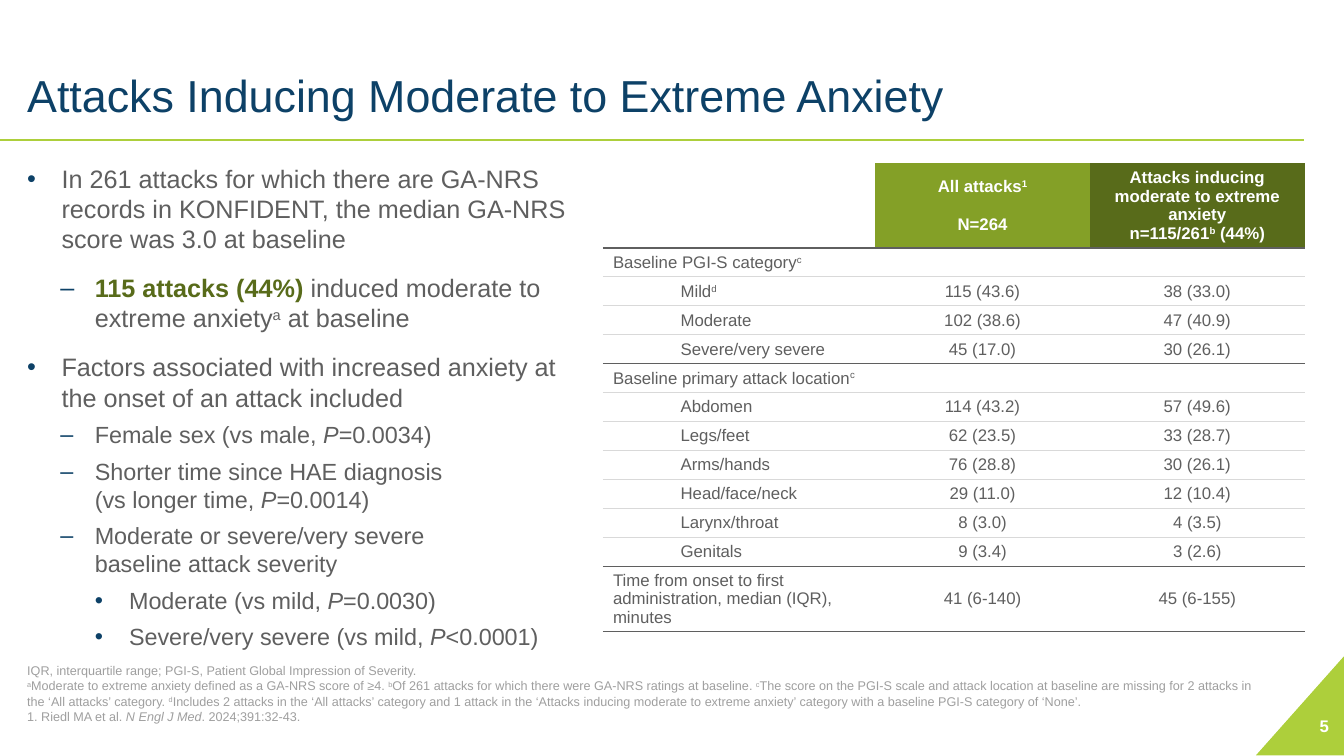
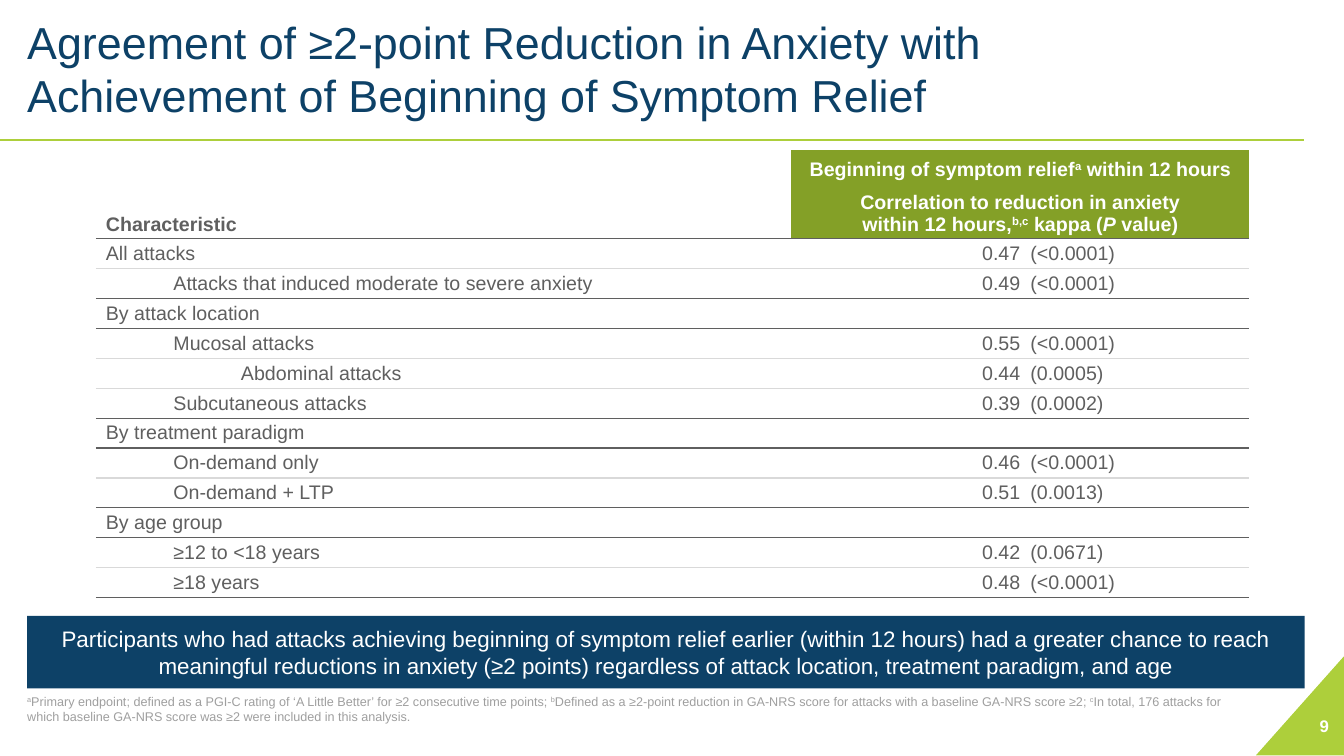
from dataclasses import dataclass

from lxml import etree
from pptx import Presentation
from pptx.dml.color import RGBColor
from pptx.enum.shapes import MSO_CONNECTOR, MSO_SHAPE
from pptx.enum.text import MSO_ANCHOR, MSO_AUTO_SIZE, PP_ALIGN
from pptx.oxml.ns import qn
from pptx.util import Inches, Pt

LEFT, CENTER, RIGHT = PP_ALIGN.LEFT, PP_ALIGN.CENTER, PP_ALIGN.RIGHT
TOP, MIDDLE, BOTTOM = MSO_ANCHOR.TOP, MSO_ANCHOR.MIDDLE, MSO_ANCHOR.BOTTOM
NO_FIT = MSO_AUTO_SIZE.NONE
RECTANGLE, TRIANGLE = MSO_SHAPE.RECTANGLE, MSO_SHAPE.RIGHT_TRIANGLE
STRAIGHT = MSO_CONNECTOR.STRAIGHT
TITLE_ONLY = 5
PLAIN_TABLE = "{2D5ABB26-0587-4C30-8999-92F81FD0307C}"


@dataclass(frozen=True)
class Theme:
    """Colours, font and type sizes of the deck."""

    font: str = "Arial"
    navy: str = "0D4167"
    lime: str = "ADCF3B"
    green: str = "84A027"
    olive: str = "586B1A"
    text: str = "5F5F5F"
    muted: str = "9F9F9F"
    rule: str = "D9D9D9"
    white: str = "FFFFFF"
    title: float = 32
    body: float = 18
    detail: float = 16.7
    callout: float = 16
    table: float = 14
    small: float = 12
    note: float = 9


THEME = Theme()

TITLE_BOX = (0.27, 0.27, 11.78, 0.99)
NOTE_BOX = (0.27, 6.7, 12.18, 0.48)
NUMBER_BOX = (12.62, 7, 0.66, 0.4)
CORNER_BOX = (12.4, 6.56, 0.99, 0.88)

ANXIETY_BULLETS = [
    (0, THEME.body, 0, "In 261 attacks for which there are GA-NRS records in KONFIDENT, "
     "the median GA-NRS score was 3.0 at baseline"),
    (1, THEME.body, 13.3, "*115 attacks (44%)* induced moderate to extreme anxiety^a^ at baseline"),
    (0, THEME.body, 13.3, "Factors associated with increased anxiety at the onset of an attack included"),
    (1, THEME.detail, 6, "Female sex (vs male, _P_=0.0034)"),
    (1, THEME.detail, 6, "Shorter time since HAE diagnosis\n(vs longer time, _P_=0.0014)"),
    (1, THEME.detail, 6, "Moderate or severe/very severe\nbaseline attack severity"),
    (2, THEME.detail, 6, "Moderate (vs mild, _P_=0.0030)"),
    (2, THEME.detail, 6, "Severe/very severe (vs mild, _P_<0.0001)"),
]

ANXIETY_ROWS = [
    (0, "Baseline PGI-S category^c^", "", ""),
    (1, "Mild^d^", "115 (43.6)", "38 (33.0)"),
    (1, "Moderate", "102 (38.6)", "47 (40.9)"),
    (1, "Severe/very severe", "45 (17.0)", "30 (26.1)"),
    (0, "Baseline primary attack location^c^", "", ""),
    (1, "Abdomen", "114 (43.2)", "57 (49.6)"),
    (1, "Legs/feet", "62 (23.5)", "33 (28.7)"),
    (1, "Arms/hands", "76 (28.8)", "30 (26.1)"),
    (1, "Head/face/neck", "29 (11.0)", "12 (10.4)"),
    (1, "Larynx/throat", "8 (3.0)", "4 (3.5)"),
    (1, "Genitals", "9 (3.4)", "3 (2.6)"),
    (0, "Time from onset to first administration, median (IQR), minutes",
     "41 (6-140)", "45 (6-155)"),
]

ANXIETY_NOTE = (
    "IQR, interquartile range; PGI-S, Patient Global Impression of Severity.\n"
    "^a^Moderate to extreme anxiety defined as a GA-NRS score of ≥4. "
    "^b^Of 261 attacks for which there were GA-NRS ratings at baseline. "
    "^c^The score on the PGI-S scale and attack location at baseline are missing "
    "for 2 attacks in the ‘All attacks’ category. "
    "^d^Includes 2 attacks in the ‘All attacks’ category and 1 attack in the "
    "‘Attacks inducing moderate to extreme anxiety’ category with a baseline PGI-S "
    "category of ‘None’.\n1. Riedl MA et al. _N Engl J Med_. 2024;391:32-43."
)

RELIEF_ROWS = [
    (0, "All attacks", "0.47", "(<0.0001)"),
    (1, "Attacks that induced moderate to severe anxiety", "0.49", "(<0.0001)"),
    (0, "By attack location", "", ""),
    (1, "Mucosal attacks", "0.55", "(<0.0001)"),
    (2, "Abdominal attacks", "0.44", "(0.0005)"),
    (1, "Subcutaneous attacks", "0.39", "(0.0002)"),
    (0, "By treatment paradigm", "", ""),
    (1, "On-demand only", "0.46", "(<0.0001)"),
    (1, "On-demand + LTP", "0.51", "(0.0013)"),
    (0, "By age group", "", ""),
    (1, "≥12 to <18 years", "0.42", "(0.0671)"),
    (1, "≥18 years", "0.48", "(<0.0001)"),
]

RELIEF_NOTE = (
    "^a^Primary endpoint; defined as a PGI-C rating of ‘A Little Better’ for ≥2 "
    "consecutive time points; ^b^Defined as a ≥2-point reduction in GA-NRS score for "
    "attacks with a baseline GA-NRS score ≥2; ^c^In total, 176 attacks for which "
    "baseline GA-NRS score was ≥2 were included in this analysis."
)

RELIEF_CALLOUT = (
    "Participants who had attacks achieving beginning of symptom relief earlier "
    "(within 12 hours) had a greater chance to reach meaningful reductions in anxiety "
    "(≥2 points) regardless of attack location, treatment paradigm, and age"
)


def rgb(color):
    """Return a colour object for a hex string."""
    return RGBColor.from_string(color)


def inches(box):
    """Convert a box in inches to lengths."""
    return [Inches(v) for v in box]


def write_rich(p, text, size, color, bold=False, strong=None):
    """Write text in which ^, _ and * toggle superscript, italic and strong."""
    on = {"^": False, "_": False, "*": False}
    if not text:
        p._p.get_or_add_endParaRPr().set("sz", str(int(size * 100)))
    for mark in on:
        text = text.replace(mark, f"\0{mark}\0")
    for part in text.replace("\n", "\0\n\0").split("\0"):
        if part in on:
            on[part] = not on[part]
        elif part == "\n":
            p.add_line_break()
        elif part:
            r = p.add_run()
            r.text = part
            r.font.name, r.font.size = THEME.font, Pt(size)
            r.font.bold, r.font.italic = bold or on["*"], on["_"]
            r.font.color.rgb = rgb(strong if on["*"] and strong else color)
            if on["^"]:
                r._r.get_or_add_rPr().set("baseline", "30000")


def set_frame(tf, anchor, margins=None):
    """Set wrapping, anchor and (horizontal, vertical) margins of a text frame."""
    tf.word_wrap, tf.auto_size, tf.vertical_anchor = True, NO_FIT, anchor
    if margins:
        tf.margin_left = tf.margin_right = Inches(margins[0])
        tf.margin_top = tf.margin_bottom = Inches(margins[1])


def add_text(s, box, text, size, color, anchor, align=LEFT, bold=False, margins=None):
    """Add a one-paragraph text box."""
    tf = s.shapes.add_textbox(*inches(box)).text_frame
    set_frame(tf, anchor, margins)
    tf.paragraphs[0].alignment = align
    write_rich(tf.paragraphs[0], text, size, color, bold)


def add_block(s, kind, box, fill):
    """Add a filled shape without outline or shadow."""
    sp = s.shapes.add_shape(kind, *inches(box))
    sp.shadow.inherit = False
    sp.fill.solid()
    sp.fill.fore_color.rgb = rgb(fill)
    sp.line.fill.background()
    return sp


def add_slide(prs, title, number, note):
    """Add a slide with title, rule, corner, page number and footnote."""
    s = prs.slides.add_slide(prs.slide_layouts[TITLE_ONLY])
    corner = add_block(s, TRIANGLE, CORNER_BOX, THEME.lime)
    corner.rotation = 270
    line = s.shapes.add_connector(STRAIGHT, *inches((12.93, 1.39, 0, 1.39)))
    line.line.color.rgb, line.line.width = rgb(THEME.lime), Pt(2)
    etree.SubElement(line.element.spPr, qn("a:effectLst"))
    sp = s.shapes.title
    sp.left, sp.top, sp.width, sp.height = inches(TITLE_BOX)
    set_frame(sp.text_frame, BOTTOM, (0, 0.05))
    p = sp.text_frame.paragraphs[0]
    p.alignment, p.line_spacing = LEFT, 1.0
    write_rich(p, title, THEME.title, THEME.navy)
    add_text(s, NUMBER_BOX, str(number), THEME.small, THEME.white, MIDDLE, RIGHT, True)
    add_text(s, NOTE_BOX, note, THEME.note, THEME.muted, BOTTOM, margins=(0, 0))
    return s


def add_bullets(s, box, items):
    """Add a three-level bulleted list."""
    tf = s.shapes.add_textbox(*inches(box)).text_frame
    set_frame(tf, TOP, (0, 0.05))
    for i, (level, size, before, text) in enumerate(items):
        p = tf.add_paragraph() if i else tf.paragraphs[0]
        p.level, p.line_spacing, p.space_before = level, 1.0, Pt(before)
        pPr = p._p.get_or_add_pPr()
        pPr.set("marL", str(Inches(round(0.335 * (level + 1), 2))))
        pPr.set("indent", str(-Inches(0.34)))
        color = etree.SubElement(pPr, qn("a:buClr"))
        etree.SubElement(color, qn("a:srgbClr"), val=THEME.navy)
        etree.SubElement(pPr, qn("a:buFont"), typeface=THEME.font)
        etree.SubElement(pPr, qn("a:buChar"), char="•‒•"[level])
        write_rich(p, text, size, THEME.text, strong=THEME.olive)


def fill_cell(cell, paras, size, align=LEFT, anchor=MIDDLE, level=0, fill=None,
              bold=False, gap=0, pad=0.03):
    """Fill a table cell with paragraphs."""
    cell.vertical_anchor = anchor
    cell.margin_top = cell.margin_bottom = Inches(pad)
    color = THEME.white if fill else THEME.text
    for i, text in enumerate(paras):
        p = cell.text_frame.add_paragraph() if i else cell.text_frame.paragraphs[0]
        p.alignment = align
        if i:
            p.space_before = Pt(gap)
        if level:
            p.level = level
            p._p.get_or_add_pPr().set("marL", str(Inches(round(0.67 * level, 2))))
        write_rich(p, text, size, color, bold)
    if fill:
        cell.fill.solid()
        cell.fill.fore_color.rgb = rgb(fill)


def set_border(cell, side, color):
    """Draw one horizontal border of a cell."""
    ln = etree.SubElement(cell._tc.get_or_add_tcPr(), qn(f"a:{side}"), w=str(Pt(1)))
    solid = etree.SubElement(ln, qn("a:solidFill"))
    etree.SubElement(solid, qn("a:srgbClr"), val=color)


def add_grid(s, box, cols, heights, first_rule, dark):
    """Add a plain table ruled below each row, darker below the rows in dark."""
    frame = s.shapes.add_table(len(heights), len(cols), *inches(box))
    frame.element.find(".//" + qn("a:tableStyleId")).text = PLAIN_TABLE
    table = frame.table
    table.first_row = table.horz_banding = False
    for col, width in zip(table.columns, cols):
        col.width = Inches(width)
    for i, (row, height) in enumerate(zip(table.rows, heights)):
        row.height = Inches(height)
        for cell in row.cells:
            for side, above in (("lnT", i - 1), ("lnB", i)):
                if above >= first_rule:
                    set_border(cell, side, THEME.text if above in dark else THEME.rule)
            cell.fill.background()
    return table


def add_anxiety_table(s, box):
    """Add the table of attack characteristics."""
    heights = [0.84] + [3.16 / 11] * 11 + [0.65]
    table = add_grid(s, box, (2.7, 2.13, 2.13), heights, 0, {0, 4, 11, 12})
    fill_cell(table.cell(0, 0), [""], THEME.small)
    heads = [(["All attacks^1^", "N=264"], THEME.green, 13.5),
             (["Attacks inducing\nmoderate to extreme anxiety", "n=115/261^b^ (44%)"],
              THEME.olive, 0)]
    for c, (paras, fill, gap) in enumerate(heads, 1):
        fill_cell(table.cell(0, c), paras, THEME.small, CENTER, fill=fill, bold=True, gap=gap)
    for r, (level, label, *values) in enumerate(ANXIETY_ROWS, 1):
        fill_cell(table.cell(r, 0), [label], THEME.small, level=level)
        for c, value in enumerate(values, 1):
            fill_cell(table.cell(r, c), [value], THEME.small, CENTER)


def add_relief_table(s, box):
    """Add the table of kappa correlations."""
    heights = [0.38, 0.5] + [3.56 / 12] * 12
    table = add_grid(s, box, (6.9, 2.27, 2.27), heights, 1, {1, 3, 4, 7, 8, 10, 11, 13})
    table.cell(0, 0).merge(table.cell(1, 0))
    fill_cell(table.cell(0, 0), ["Characteristic"], THEME.table, anchor=BOTTOM, bold=True)
    heads = ["Beginning of symptom relief^a^ within 12 hours",
             "Correlation to reduction in anxiety\nwithin 12 hours,^b,c^ kappa (_P_ value)"]
    for r, head in enumerate(heads):
        table.cell(r, 1).merge(table.cell(r, 2))
        fill_cell(table.cell(r, 1), [head], THEME.table, CENTER, fill=THEME.green, bold=True)
    for r, (level, label, kappa, p_value) in enumerate(RELIEF_ROWS, 2):
        fill_cell(table.cell(r, 0), [label], THEME.table, level=level)
        if not kappa:
            table.cell(r, 0).merge(table.cell(r, 2))
            continue
        fill_cell(table.cell(r, 1), [kappa], THEME.table, RIGHT)
        table.cell(r, 1).margin_right = 0
        fill_cell(table.cell(r, 2), [p_value], THEME.table)


def add_callout(s, box, text):
    """Add the navy conclusion band."""
    tf = add_block(s, RECTANGLE, box, THEME.navy).text_frame
    set_frame(tf, MIDDLE)
    tf.paragraphs[0].alignment = CENTER
    write_rich(tf.paragraphs[0], text, THEME.callout, THEME.white)


def main():
    """Build and save the deck."""
    prs = Presentation()
    prs.slide_width, prs.slide_height = Inches(13.33), Inches(7.5)
    s = add_slide(prs, "Attacks Inducing Moderate to Extreme Anxiety", 5, ANXIETY_NOTE)
    add_bullets(s, (0.27, 1.57, 5.55, 5.05), ANXIETY_BULLETS)
    add_anxiety_table(s, (5.98, 1.62, 6.96, 4.65))
    s = add_slide(prs, "Agreement of ≥2-point Reduction in Anxiety with "
                  "Achievement of Beginning of Symptom Relief", 9, RELIEF_NOTE)
    add_relief_table(s, (0.95, 1.49, 11.44, 4.44))
    add_callout(s, (0.27, 6.11, 12.67, 0.72), RELIEF_CALLOUT)
    prs.save("out.pptx")


if __name__ == "__main__":
    main()
